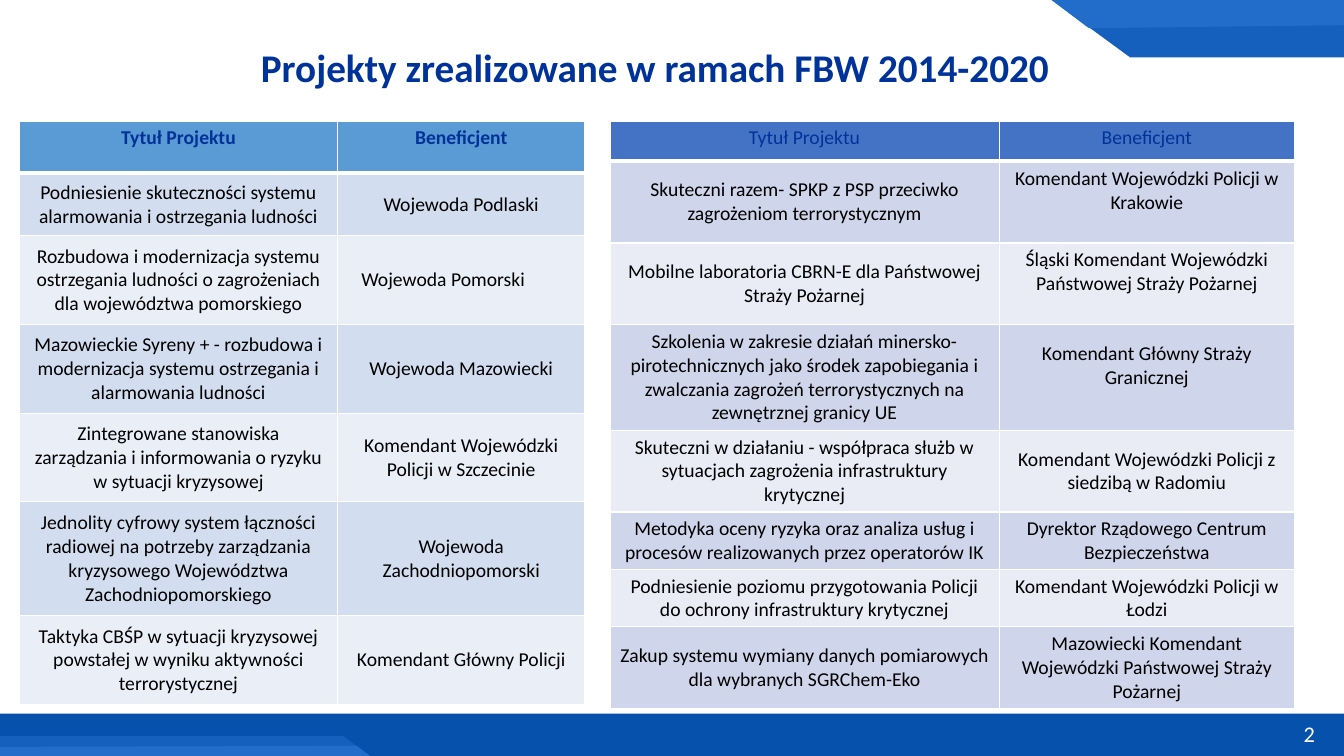
from lxml import etree
from pptx import Presentation
from pptx.dml.color import RGBColor
from pptx.enum.shapes import MSO_SHAPE
from pptx.enum.text import MSO_ANCHOR, PP_ALIGN
from pptx.oxml.ns import qn
from pptx.util import Inches, Pt

RECTANGLE = MSO_SHAPE.RECTANGLE
TOP, MIDDLE = MSO_ANCHOR.TOP, MSO_ANCHOR.MIDDLE
LEFT, CENTER, RIGHT = PP_ALIGN.LEFT, PP_ALIGN.CENTER, PP_ALIGN.RIGHT

FONT = "Calibri"
WHITE, BLACK, NAVY = "FFFFFF", "000000", "003399"
FOOTER_BLUE, DARK_BLUE, LIGHT_BLUE = "0651AC", "1560BD", "226DC9"

HEADER = ("Tytuł Projektu", "Beneficjent")
ALARM_PROJECTS = [
    HEADER,
    ("Podniesienie skuteczności systemu alarmowania i ostrzegania ludności",
     "Wojewoda Podlaski"),
    ("Rozbudowa i modernizacja systemu ostrzegania ludności o zagrożeniach "
     "dla województwa pomorskiego", "Wojewoda Pomorski"),
    ("Mazowieckie Syreny + - rozbudowa i modernizacja systemu ostrzegania i "
     "alarmowania ludności", "Wojewoda Mazowiecki"),
    ("Zintegrowane stanowiska zarządzania i informowania o ryzyku w sytuacji "
     "kryzysowej", "Komendant Wojewódzki Policji w Szczecinie"),
    ("Jednolity cyfrowy system łączności radiowej na potrzeby zarządzania "
     "kryzysowego Województwa Zachodniopomorskiego",
     "Wojewoda Zachodniopomorski"),
    ("Taktyka CBŚP w sytuacji kryzysowej powstałej w wyniku aktywności "
     "terrorystycznej", "Komendant Główny Policji"),
]
SECURITY_PROJECTS = [
    HEADER,
    ("Skuteczni razem- SPKP z PSP przeciwko zagrożeniom terrorystycznym",
     "Komendant Wojewódzki Policji w Krakowie"),
    ("Mobilne laboratoria CBRN-E dla Państwowej Straży Pożarnej",
     "Śląski Komendant Wojewódzki Państwowej Straży Pożarnej"),
    ("Szkolenia w zakresie działań minersko- pirotechnicznych jako środek "
     "zapobiegania i zwalczania zagrożeń terrorystycznych na zewnętrznej "
     "granicy UE", "Komendant Główny Straży Granicznej"),
    ("Skuteczni w działaniu - współpraca służb w sytuacjach zagrożenia "
     "infrastruktury krytycznej",
     "Komendant Wojewódzki Policji z siedzibą w Radomiu"),
    ("Metodyka oceny ryzyka oraz analiza usług i procesów realizowanych "
     "przez operatorów IK", "Dyrektor Rządowego Centrum Bezpieczeństwa"),
    ("Podniesienie poziomu przygotowania Policji do ochrony infrastruktury "
     "krytycznej", "Komendant Wojewódzki Policji w Łodzi"),
    ("Zakup systemu wymiany danych pomiarowych dla wybranych SGRChem-Eko",
     "Mazowiecki Komendant Wojewódzki Państwowej Straży Pożarnej"),
]


def color(hex_code):
    return RGBColor.from_string(hex_code)


class SlideBuilder:
    def __init__(self, slide, font):
        self.slide = slide
        self.font = font

    def paint(self, shape, fill):
        shape.shadow.inherit = False
        shape.fill.solid()
        shape.fill.fore_color.rgb = color(fill)
        shape.line.fill.background()

    def rectangle(self, left, top, width, height, fill):
        shape = self.slide.shapes.add_shape(
            RECTANGLE, Inches(left), Inches(top), Inches(width), Inches(height))
        self.paint(shape, fill)

    def polygon(self, points, fill):
        corners = [(Inches(x), Inches(y)) for x, y in points]
        builder = self.slide.shapes.build_freeform(*corners[0])
        builder.add_line_segments(corners[1:], close=True)
        self.paint(builder.convert_to_shape(), fill)

    def fill_text(self, frame, text, size, ink, bold=False, align=LEFT):
        frame.text = text
        para = frame.paragraphs[0]
        para.alignment = align
        font = para.runs[0].font
        font.name, font.size, font.bold = self.font, Pt(size), bold
        font.color.rgb = color(ink)
        return para

    def text(self, left, top, width, height, text, size, ink,
             bold=False, align=LEFT, anchor=TOP):
        box = self.slide.shapes.add_textbox(
            Inches(left), Inches(top), Inches(width), Inches(height))
        box.text_frame.word_wrap = True
        box.text_frame.vertical_anchor = anchor
        return self.fill_text(box.text_frame, text, size, ink, bold, align)

    def borders(self, cell, top, bottom):
        """Draw white cell edges; top and bottom are widths in points."""
        properties = cell._tc.get_or_add_tcPr()
        for side, width in (("L", 1), ("R", 1), ("T", top), ("B", bottom)):
            line = etree.SubElement(properties, qn(f"a:ln{side}"), w=str(Pt(width)))
            fill = etree.SubElement(line, qn("a:solidFill"))
            etree.SubElement(fill, qn("a:srgbClr"), val=WHITE)

    def table(self, left, top, widths, heights, rows, header_fill, bands,
              bold_header):
        frame = self.slide.shapes.add_table(
            len(rows), len(widths), Inches(left), Inches(top),
            Inches(sum(widths)), Inches(sum(heights)))
        table = frame.table
        for column, width in zip(table.columns, widths):
            column.width = Inches(width)
        for index, (height, texts) in enumerate(zip(heights, rows)):
            table.rows[index].height = Inches(height)
            header = index == 0
            for cell, text in zip(table.rows[index].cells, texts):
                self.fill_text(cell.text_frame, text, 14, NAVY if header else BLACK,
                               header and bold_header, CENTER)
                cell.vertical_anchor = TOP if header else MIDDLE
                self.borders(cell, 3 if index == 1 else 1, 3 if header else 1)
                cell.fill.solid()
                cell.fill.fore_color.rgb = color(
                    header_fill if header else bands[(index - 1) % 2])
        return table


def main():
    deck = Presentation()
    deck.slide_width, deck.slide_height = Inches(13.33), Inches(7.5)
    page = SlideBuilder(deck.slides.add_slide(deck.slide_layouts[6]), FONT)

    page.polygon([(13.33, -0.03), (10.39, -0.03), (11.21, 0.57), (13.33, 0.57)],
                 DARK_BLUE)
    page.polygon([(13.33, -0.03), (10.39, -0.03), (10.8, 0.28), (13.33, 0.25)],
                 LIGHT_BLUE)
    page.rectangle(0, 7.08, 13.33, 0.42, FOOTER_BLUE)
    page.polygon([(0, 7.5), (3.67, 7.5), (3.4, 7.3), (0, 7.3)], DARK_BLUE)
    page.polygon([(0, 7.5), (3.67, 7.5), (3.54, 7.4), (-0.01, 7.41)], LIGHT_BLUE)

    page.text(10.14, 7.08, 3, 0.4, "2", 16, WHITE, align=RIGHT, anchor=MIDDLE)
    title = page.text(2.49, 0.43, 10, 0.77,
                      "Projekty zrealizowane w ramach FBW 2014-2020",
                      28, NAVY, bold=True)
    title.line_spacing = 0.9

    alarm = page.table(0.19, 1.2, [3.16, 2.45],
                       [0.52, 0.62, 0.88, 0.88, 0.88, 1.13, 0.88],
                       ALARM_PROJECTS, "5B9BD5", ("D2DEEF", "EAEFF7"), True)
    alarm.cell(2, 1).margin_right = Inches(0.46)

    security = page.table(6.05, 1.2, [3.86, 2.93],
                          [0.4, 0.81, 0.81, 1.05, 0.81, 0.57, 0.57, 0.81],
                          SECURITY_PROJECTS, "4472C4", ("CFD5EA", "E9EBF5"), False)
    for row in (1, 2, 3):
        security.cell(row, 1).margin_bottom = Inches(0.28)

    deck.save("out.pptx")


if __name__ == "__main__":
    main()
